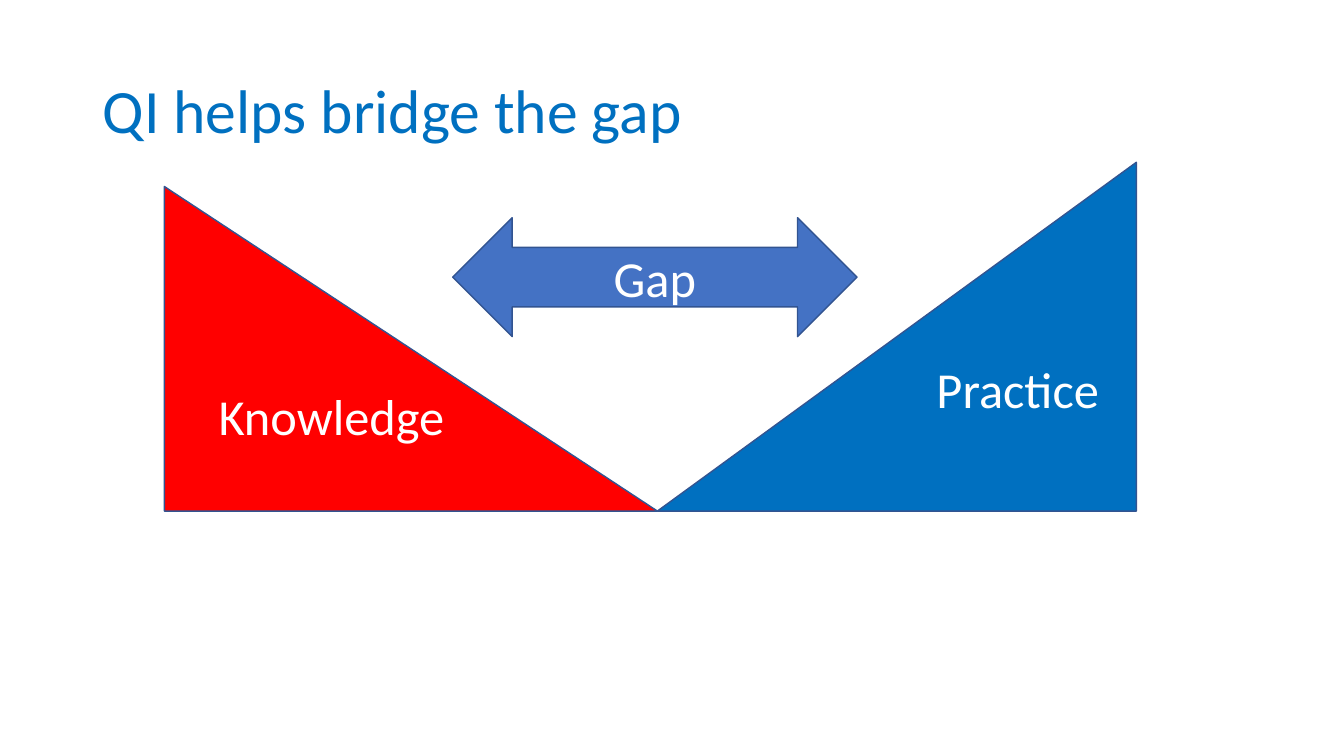
from pptx import Presentation
from pptx.dml.color import RGBColor
from pptx.enum.shapes import MSO_SHAPE as Preset
from pptx.enum.text import MSO_ANCHOR as Anchor, MSO_AUTO_SIZE as AutoSize, PP_ALIGN as Align
from pptx.util import Inches, Pt

WHITE = RGBColor(0xFF, 0xFF, 0xFF)
RED = RGBColor(0xFF, 0x00, 0x00)
BLUE = RGBColor(0x00, 0x70, 0xC0)
ARROW_BLUE = RGBColor(0x44, 0x72, 0xC4)
OUTLINE = RGBColor(0x32, 0x54, 0x91)
FONT = "Calibri"


def write_text(text_frame, text, size, color, align=Align.LEFT):
    text_frame.text = text
    paragraph = text_frame.paragraphs[0]
    paragraph.alignment = align
    paragraph.font.name = FONT
    paragraph.font.size = Pt(size)
    paragraph.font.color.rgb = color
    return paragraph


def add_title(slide, left, top, width, height):
    title = slide.shapes.title
    title.left, title.top = Inches(left), Inches(top)
    title.width, title.height = Inches(width), Inches(height)
    title.text_frame.vertical_anchor = Anchor.MIDDLE
    paragraph = write_text(title.text_frame, "QI helps bridge the gap", 44, BLUE)
    paragraph.line_spacing = 0.9


def add_outlined_shape(slide, preset, left, top, width, height, fill):
    shape = slide.shapes.add_shape(preset, Inches(left), Inches(top), Inches(width), Inches(height))
    shape.shadow.inherit = False
    shape.fill.solid()
    shape.fill.fore_color.rgb = fill
    shape.line.color.rgb = OUTLINE
    shape.line.width = Pt(1)
    return shape


def add_label(slide, text, left, top, width, height):
    label = slide.shapes.add_textbox(Inches(left), Inches(top), Inches(width), Inches(height))
    label.text_frame.word_wrap = False
    label.text_frame.auto_size = AutoSize.SHAPE_TO_FIT_TEXT
    write_text(label.text_frame, text, 36, WHITE)


def add_knowledge(slide, left, top, width, height):
    add_outlined_shape(slide, Preset.RIGHT_TRIANGLE, left, top, width, height, RED)
    add_label(slide, "Knowledge", left + 0.44, top + 1.92, 2.46, 0.71)


def add_practice(slide, left, top, width, height):
    # A quarter turn swaps width and height around the centre of the box
    shift = (width - height) / 2
    triangle = add_outlined_shape(slide, Preset.RIGHT_TRIANGLE, left + shift, top - shift,
                                  height, width, BLUE)
    triangle.rotation = 270
    add_label(slide, "Practice", left + 2.67, top + 1.89, 1.83, 0.71)


def add_gap_arrow(slide, left, top, width, height):
    arrow = add_outlined_shape(slide, Preset.LEFT_RIGHT_ARROW, left, top, width, height, ARROW_BLUE)
    arrow.text_frame.vertical_anchor = Anchor.MIDDLE
    write_text(arrow.text_frame, "Gap", 36, WHITE, Align.CENTER)


def main():
    presentation = Presentation()
    presentation.slide_width, presentation.slide_height = Inches(13.33), Inches(7.5)
    slide = presentation.slides.add_slide(presentation.slide_layouts[5])

    add_title(slide, 0.92, 0.4, 11.5, 1.45)

    # The two triangles meet at one point on the same baseline
    baseline, meeting = 5.07, 6.52
    knowledge_width, knowledge_height = 4.89, 3.22
    practice_width, practice_height = 4.75, 3.46
    add_knowledge(slide, meeting - knowledge_width, baseline - knowledge_height,
                  knowledge_width, knowledge_height)
    add_practice(slide, meeting, baseline - practice_height, practice_width, practice_height)

    add_gap_arrow(slide, 4.49, 2.16, 4.01, 1.18)

    presentation.save("out.pptx")


if __name__ == "__main__":
    main()
